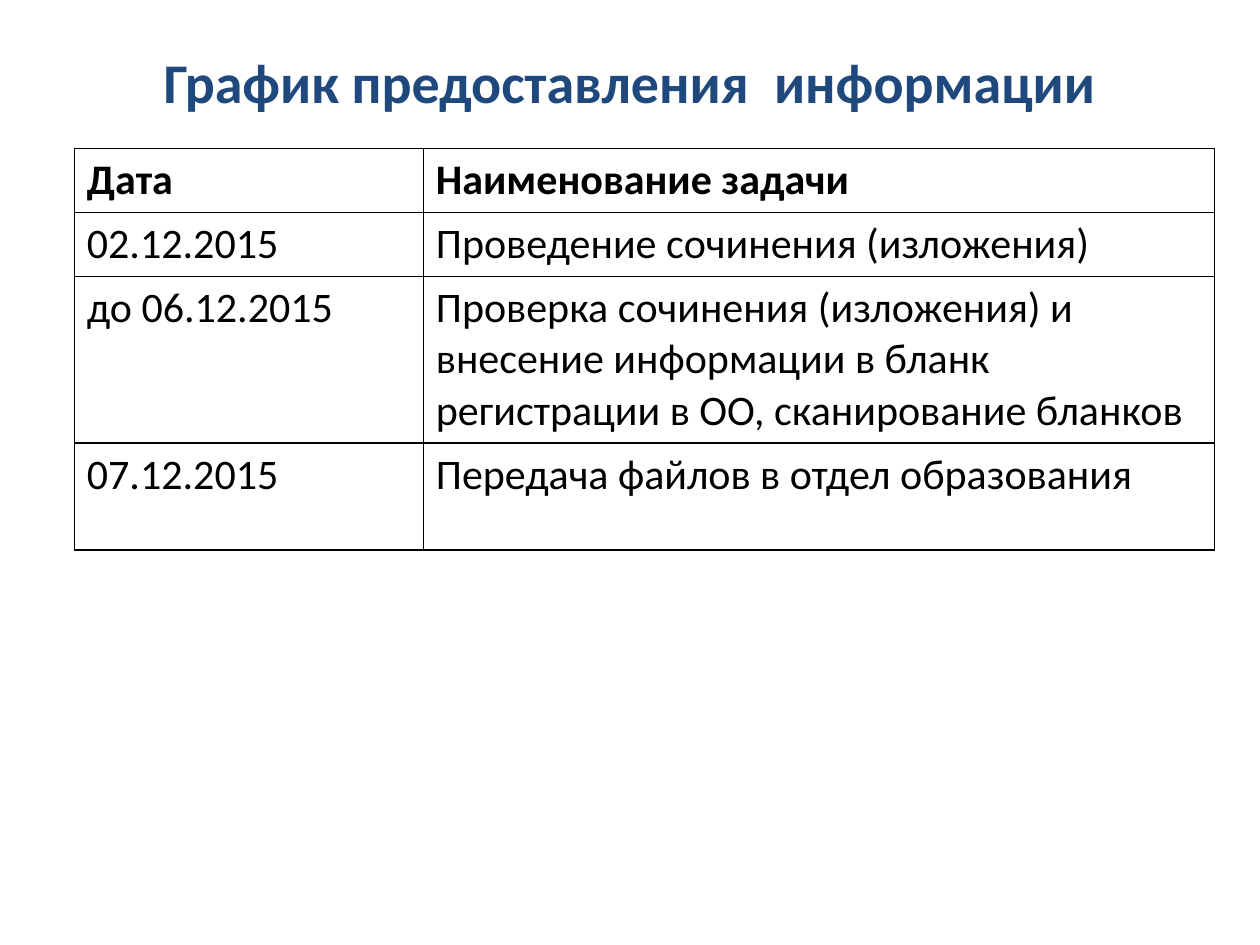
from lxml import etree
from pptx import Presentation
from pptx.dml.color import RGBColor
from pptx.enum.text import MSO_ANCHOR, PP_ALIGN
from pptx.oxml.ns import qn
from pptx.util import Inches, Pt

CENTER = PP_ALIGN.CENTER
MIDDLE = MSO_ANCHOR.MIDDLE
NAVY = RGBColor(0x1F, 0x49, 0x7D)
BLACK = RGBColor(0, 0, 0)
FONT = "Calibri"
TITLE_ONLY = 5

COLUMN_WIDTHS = (2.77, 6.28)
ROW_HEIGHTS = (0.5, 0.5, 1.3, 0.85)
SCHEDULE = (
    ("Дата", "Наименование задачи"),
    ("02.12.2015", "Проведение сочинения (изложения)"),
    ("до 06.12.2015", "Проверка сочинения (изложения) и внесение информации "
                      "в бланк регистрации в ОО, сканирование бланков"),
    ("07.12.2015", "Передача файлов в отдел образования"),
)


def add_text(paragraph, text, size, color, bold):
    """Append one formatted run to a paragraph."""
    run = paragraph.add_run()
    run.text = text
    run.font.name = FONT
    run.font.size = Pt(size)
    run.font.bold = bold
    run.font.color.rgb = color


def set_title(slide, text):
    """Place and fill the title placeholder."""
    title = slide.shapes.title
    title.left, title.top = Inches(0.5), Inches(0.3)
    title.width, title.height = Inches(9), Inches(0.69)
    title.text_frame.vertical_anchor = MIDDLE
    heading = title.text_frame.paragraphs[0]
    heading.alignment = CENTER
    add_text(heading, text, 32, NAVY, True)


def set_borders(cell, color, width):
    """Draw a solid line on all four sides of a cell."""
    properties = cell._tc.get_or_add_tcPr()
    for position, side in enumerate(("a:lnL", "a:lnR", "a:lnT", "a:lnB")):
        line = etree.Element(qn(side), w=str(Pt(width)))
        fill = etree.SubElement(line, qn("a:solidFill"))
        etree.SubElement(fill, qn("a:srgbClr"), val=str(color))
        properties.insert(position, line)


def add_schedule(slide, left, top):
    """Add the table of dates and tasks with a bold header row."""
    frame = slide.shapes.add_table(
        len(ROW_HEIGHTS), len(COLUMN_WIDTHS), Inches(left), Inches(top),
        Inches(sum(COLUMN_WIDTHS)), Inches(sum(ROW_HEIGHTS)))
    table = frame.table
    table.first_row = table.horz_banding = False
    for column, width in zip(table.columns, COLUMN_WIDTHS):
        column.width = Inches(width)
    for index, (row, height, entries) in enumerate(
            zip(table.rows, ROW_HEIGHTS, SCHEDULE)):
        row.height = Inches(height)
        for cell, entry in zip(row.cells, entries):
            cell.fill.background()
            set_borders(cell, BLACK, 1)
            add_text(cell.text_frame.paragraphs[0], entry, 24, BLACK, index == 0)
    table.cell(2, 0).text_frame.paragraphs[0].space_before = Pt(12)


def main():
    """Build and save the schedule slide."""
    presentation = Presentation()
    presentation.slide_width = Inches(10)
    presentation.slide_height = Inches(7.5)
    slide = presentation.slides.add_slide(presentation.slide_layouts[TITLE_ONLY])
    set_title(slide, "График предоставления  информации")
    add_schedule(slide, 0.59, 1.18)
    presentation.save("out.pptx")


if __name__ == "__main__":
    main()
